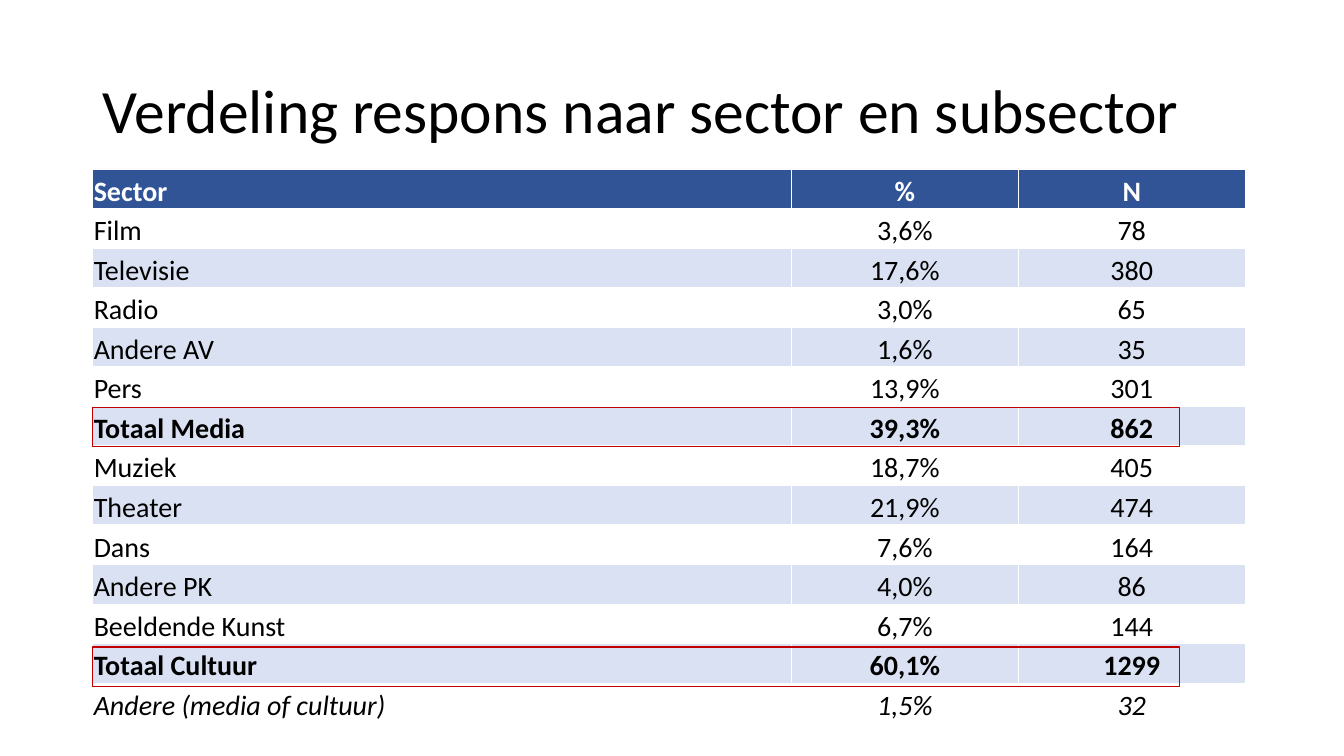
"""Builds a slide with a table of survey response by sector and subsector."""
from pptx import Presentation
from pptx import util as u
from pptx.dml.color import RGBColor
from pptx.enum import shapes, text

TITLE = "Verdeling respons naar sector en subsector"
ROWS = [
    ("Sector", "%", "N"),
    ("Film", "3,6%", "78"),
    ("Televisie", "17,6%", "380"),
    ("Radio", "3,0%", "65"),
    ("Andere AV", "1,6%", "35"),
    ("Pers", "13,9%", "301"),
    ("Totaal Media", "39,3%", "862"),
    ("Muziek", "18,7%", "405"),
    ("Theater", "21,9%", "474"),
    ("Dans", "7,6%", "164"),
    ("Andere PK", "4,0%", "86"),
    ("Beeldende Kunst", "6,7%", "144"),
    ("Totaal Cultuur", "60,1%", "1299"),
    ("Andere (media of cultuur)", "1,5%", "32"),
]
FRAME_TOPS_IN_ROWS = (6.02, 12.09)
FONT = "Calibri"
BLACK, WHITE, HEADER, BAND, FRAME = "000000", "FFFFFF", "305496", "D9E1F2", "C00000"

WIDTH, HEIGHT = 13.33, 7.5
LEFT, TOP = 0.92, 1.68
COLUMNS = (6.93, 2.25, 2.25)
TABLE_HEIGHT = 5.49
ROW = TABLE_HEIGHT / len(ROWS)
FRAME_WIDTH = 10.78


def color(code):
    return RGBColor.from_string(code)


def inches(*lengths):
    return [u.Inches(length) for length in lengths]


def style(para, size, code, bold=False, italic=False):
    for span in para.runs:
        font = span.font
        font.name, font.size = FONT, u.Pt(size)
        font.bold, font.italic = bold, italic
        font.color.rgb = color(code)


def add_title(page):
    box = page.shapes.add_textbox(*inches(LEFT, 0.4, 11.5, 1.45))
    frame = box.text_frame
    frame.word_wrap = True
    frame.vertical_anchor = text.MSO_ANCHOR.MIDDLE
    frame.text = TITLE
    para = frame.paragraphs[0]
    para.line_spacing = 0.9
    style(para, 44, BLACK)


def fill_cell(cell, value, row, column):
    cell.margin_left, cell.margin_top, cell.margin_right, cell.margin_bottom = inches(
        0.01, 0.01, 0.01, 0)
    cell.vertical_anchor = text.MSO_ANCHOR.BOTTOM
    if row % 2:
        cell.fill.background()
    else:
        cell.fill.solid()
        cell.fill.fore_color.rgb = color(BAND if row else HEADER)
    cell.text_frame.text = value
    para = cell.text_frame.paragraphs[0]
    para.alignment = text.PP_ALIGN.CENTER if column else text.PP_ALIGN.LEFT
    bold = row == 0 or ROWS[row][0].startswith("Totaal")
    style(para, 20, BLACK if row else WHITE, bold, row == len(ROWS) - 1)


def add_sector_table(page):
    place = inches(LEFT, TOP, sum(COLUMNS), TABLE_HEIGHT)
    table = page.shapes.add_table(len(ROWS), len(COLUMNS), *place).table
    table.first_row = table.horz_banding = False
    for column, width in zip(table.columns, COLUMNS):
        column.width = u.Inches(width)
    for row, values in enumerate(ROWS):
        table.rows[row].height = u.Inches(ROW)
        for column, value in enumerate(values):
            fill_cell(table.cell(row, column), value, row, column)


def add_total_frame(page, top_in_rows):
    place = inches(LEFT, TOP + top_in_rows * ROW, FRAME_WIDTH, ROW)
    box = page.shapes.add_shape(shapes.MSO_SHAPE.RECTANGLE, *place)
    box.shadow.inherit = False
    box.fill.background()
    box.line.color.rgb = color(FRAME)
    box.line.width = u.Pt(1)


def main():
    deck = Presentation()
    deck.slide_width, deck.slide_height = inches(WIDTH, HEIGHT)
    page = deck.slides.add_slide(deck.slide_layouts[6])
    add_title(page)
    add_sector_table(page)
    for top_in_rows in FRAME_TOPS_IN_ROWS:
        add_total_frame(page, top_in_rows)
    deck.save("out.pptx")


if __name__ == "__main__":
    main()
